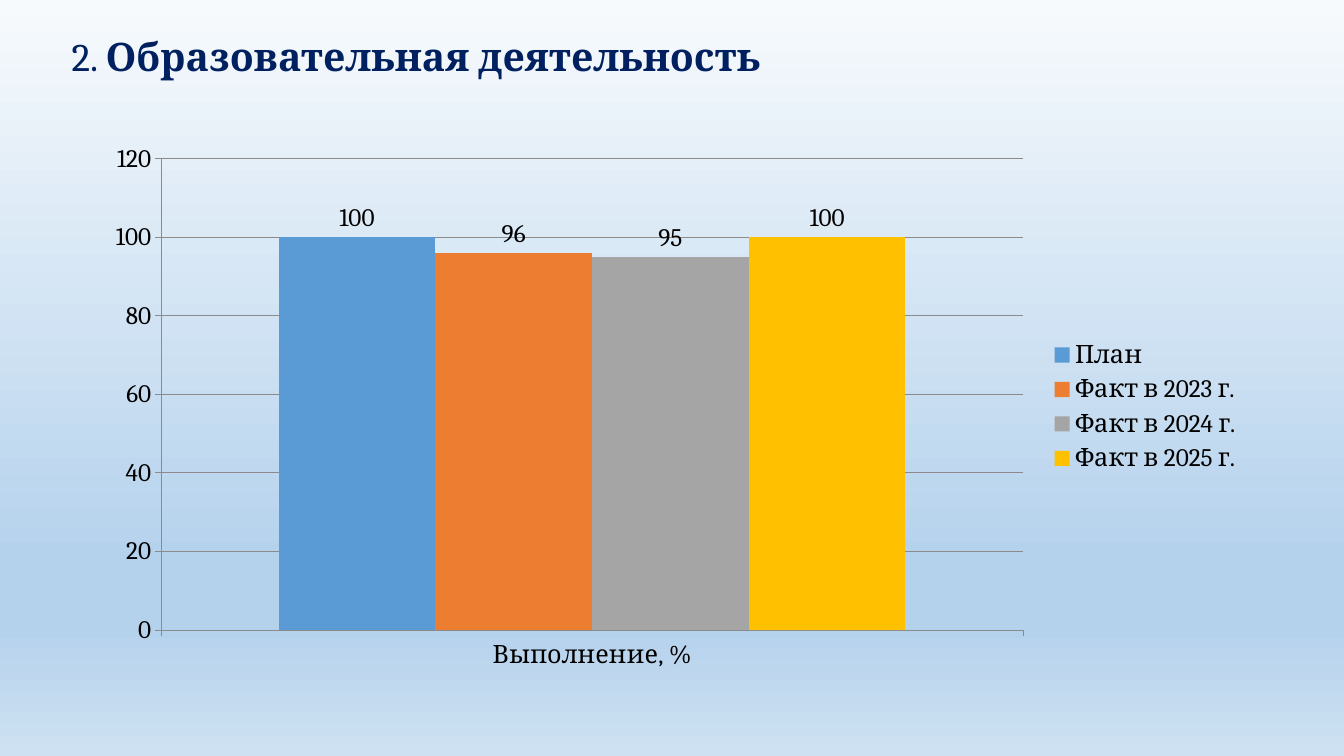
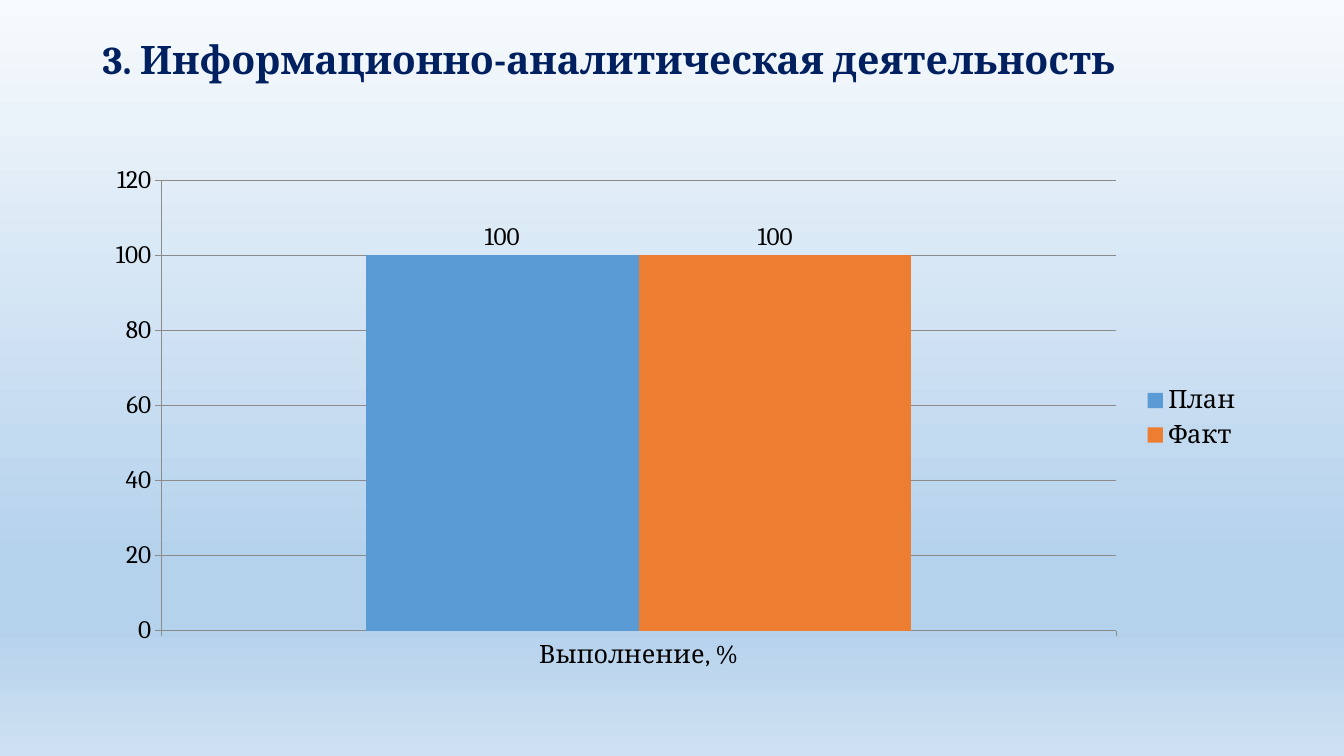
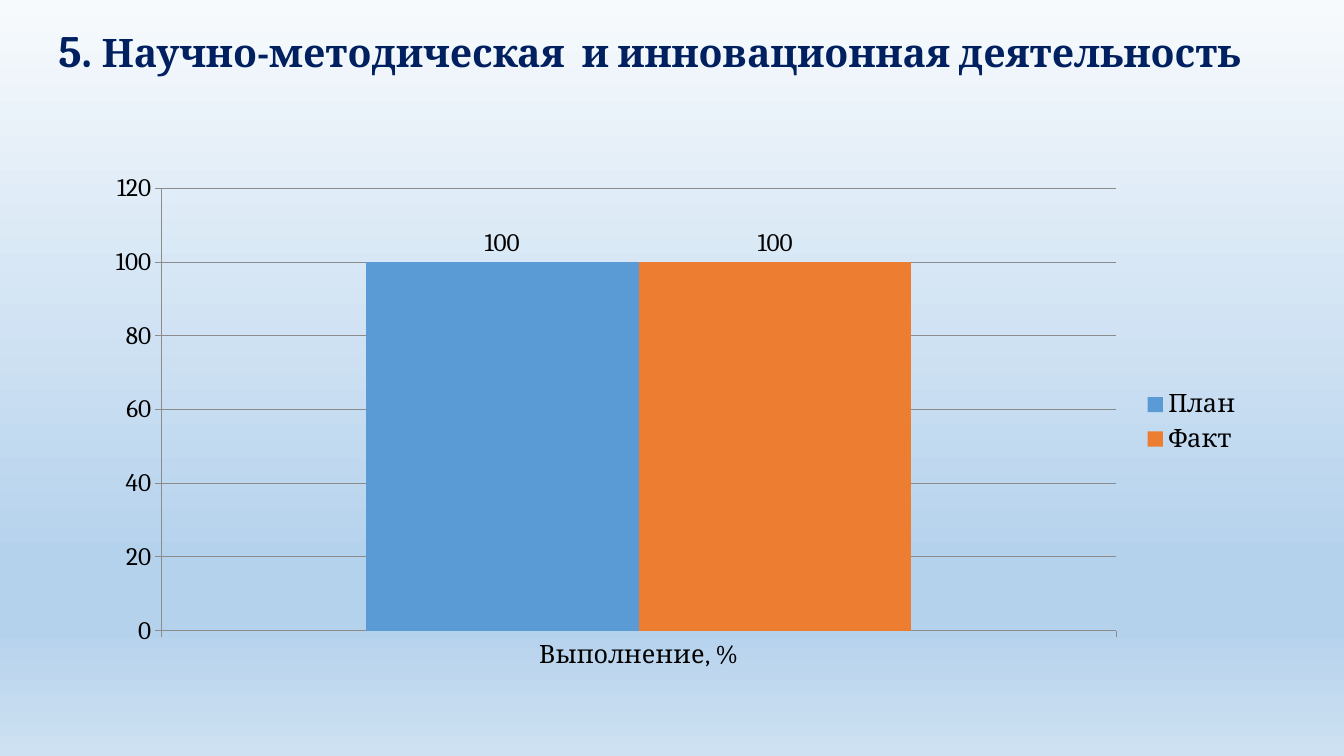
from lxml.etree import SubElement
from pptx import Presentation
from pptx.chart.data import CategoryChartData
from pptx.dml.color import RGBColor
from pptx.enum.chart import XL_CHART_TYPE, XL_LABEL_POSITION, XL_LEGEND_POSITION, XL_TICK_MARK
from pptx.enum.text import MSO_ANCHOR, PP_ALIGN
from pptx.oxml.ns import qn
from pptx.util import Inches, Pt

# Shared style
FONT = "Cambria"
COLORS = {"title": "002060", "text": "000000", "axis": "8B8B8B"}
SERIES_COLORS = ["5B9BD5", "ED7D31", "A5A5A5", "FFC000"]
BACKGROUND_STOPS = [(0, "F7FAFD"), (74, "B5D2EC"), (83, "B5D2EC"), (100, "CEE1F2")]
CATEGORY = "Выполнение, %"
CHART_LEFT, CHART_WIDTH, CHART_BOTTOM = 0.92, 11.5, 6.75

# Content: title runs are (text, size, bold)
SLIDES = [
    {
        "title": [("2. ", 28, False), ("Образовательная деятельность", 28, True)],
        "title_box": (0.35, 0.18, 7.29, 0.81),
        "align": PP_ALIGN.RIGHT,
        "chart_top": 1.32,
        "results": [("План", 100), ("Факт в 2023 г.", 96),
                    ("Факт в 2024 г.", 95), ("Факт в 2025 г.", 100)],
    },
    {
        "title": [("3. Информационно-аналитическая деятельность", 28, True)],
        "title_box": (0.92, 0.25, 12.15, 0.72),
        "align": PP_ALIGN.LEFT,
        "chart_top": 1.54,
        "results": [("План", 100), ("Факт", 100)],
    },
    {
        "title": [("5. ", 32, True),
                  ("Научно-методическая  и инновационная деятельность", 28, True)],
        "title_box": (0.48, 0, 12.85, 1.06),
        "align": PP_ALIGN.LEFT,
        "chart_top": 1.62,
        "results": [("План", 100), ("Факт", 100)],
    },
]


def apply(target, values):
    for name, value in values.items():
        setattr(target, name, value)


def style_font(font, size, color, bold=False):
    apply(font, {"name": FONT, "size": Pt(size), "bold": bold})
    font.color.rgb = RGBColor.from_string(COLORS[color])


def set_background(master):
    fill = master.background.fill
    fill.gradient()
    fill.gradient_angle = 270  # counter-clockwise: top to bottom
    stops = master.element.find(".//" + qn("a:gsLst"))
    stops.clear()
    for position, color in BACKGROUND_STOPS:
        stop = SubElement(stops, qn("a:gs"), pos=str(position * 1000))
        SubElement(stop, qn("a:srgbClr"), val=color)


def add_title(slide, runs, box, align):
    frame = slide.shapes.add_textbox(*map(Inches, box)).text_frame
    apply(frame, {"word_wrap": True, "vertical_anchor": MSO_ANCHOR.MIDDLE})
    paragraph = frame.paragraphs[0]
    apply(paragraph, {"alignment": align, "line_spacing": 0.9})
    for text, size, bold in runs:
        run = paragraph.add_run()
        run.text = text
        style_font(run.font, size, "title", bold)


def style_line(line):
    line.color.rgb = RGBColor.from_string(COLORS["axis"])
    line.width = Pt(0.75)


def add_results_chart(slide, top, results):
    data = CategoryChartData(number_format="General")
    data.categories = [CATEGORY]
    for name, value in results:
        data.add_series(name, [value])
    box = (CHART_LEFT, top, CHART_WIDTH, CHART_BOTTOM - top)
    chart = slide.shapes.add_chart(
        XL_CHART_TYPE.COLUMN_CLUSTERED, *map(Inches, box), data).chart
    apply(chart, {"has_title": False, "has_legend": True})
    style_font(chart.font, 18, "text")
    apply(chart.legend, {"position": XL_LEGEND_POSITION.RIGHT, "include_in_layout": False})

    # Axes and gridlines
    for axis in (chart.category_axis, chart.value_axis):
        apply(axis, {"major_tick_mark": XL_TICK_MARK.OUTSIDE,
                     "minor_tick_mark": XL_TICK_MARK.NONE})
        style_line(axis.format.line)
    apply(chart.value_axis, {"minimum_scale": 0, "maximum_scale": 120,
                             "major_unit": 20, "has_major_gridlines": True})
    style_line(chart.value_axis.major_gridlines.format.line)

    # Columns and their values
    plot = chart.plots[0]
    apply(plot, {"gap_width": 150, "overlap": 0, "vary_by_categories": False})
    for series, color in zip(plot.series, SERIES_COLORS):
        series.format.fill.solid()
        series.format.fill.fore_color.rgb = RGBColor.from_string(color)
        apply(series.data_labels, {"show_value": True,
                                   "position": XL_LABEL_POSITION.OUTSIDE_END})


def main():
    prs = Presentation()
    apply(prs, {"slide_width": Inches(13.33), "slide_height": Inches(7.5)})
    set_background(prs.slide_master)
    blank = prs.slide_layouts[6]
    for content in SLIDES:
        slide = prs.slides.add_slide(blank)
        add_title(slide, content["title"], content["title_box"], content["align"])
        add_results_chart(slide, content["chart_top"], content["results"])
    prs.save("out.pptx")


if __name__ == "__main__":
    main()
